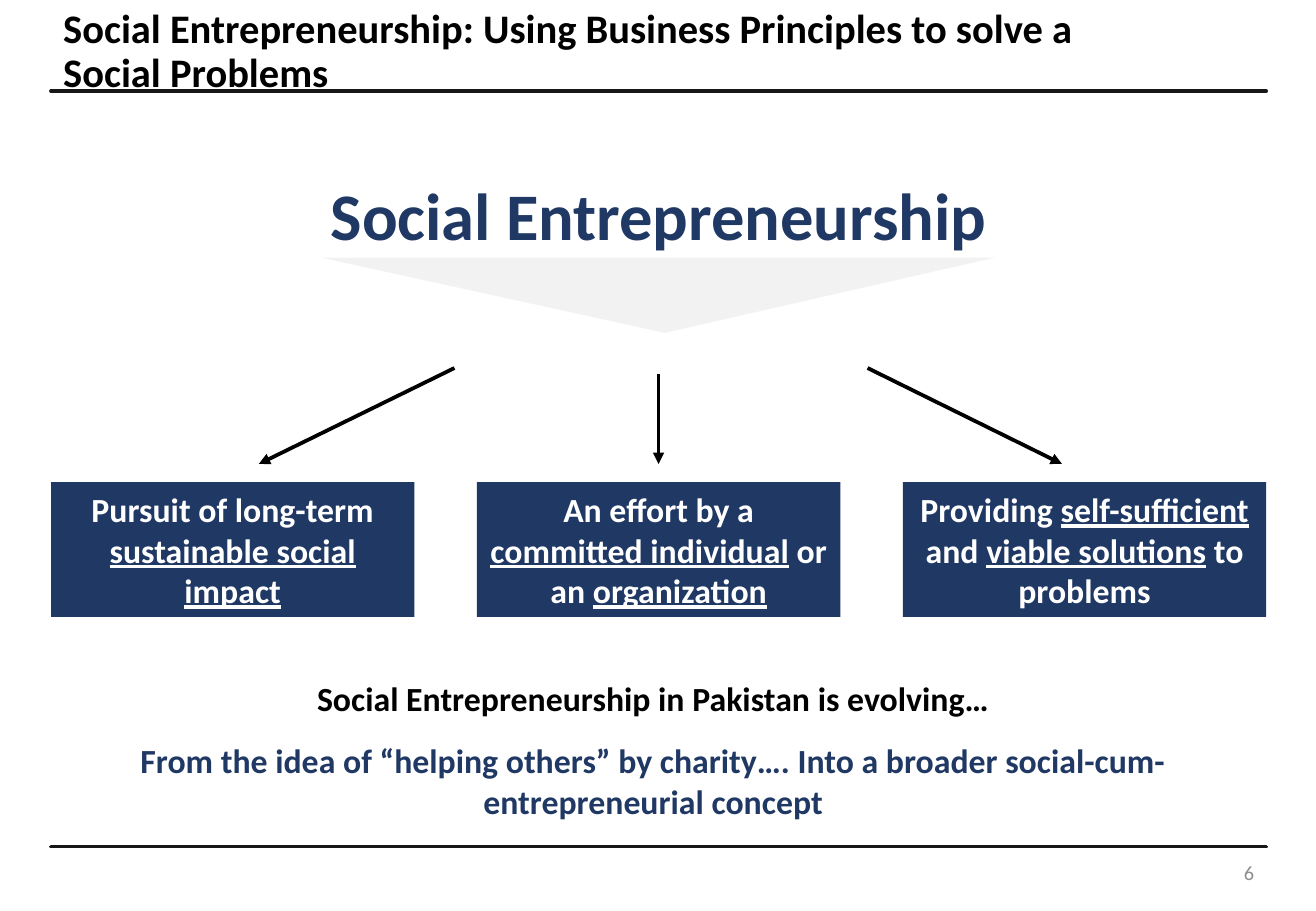
from lxml import etree
from pptx import Presentation
from pptx import util as u
from pptx.dml.color import RGBColor
from pptx.enum import shapes, text
from pptx.oxml.ns import qn

NAVY, BLACK, WHITE = "203864", "000000", "FFFFFF"
RULE, PALE, GREY = "181717", "F2F2F2", "8C8C8C"
LEFT, CENTER, RIGHT = text.PP_ALIGN.LEFT, text.PP_ALIGN.CENTER, text.PP_ALIGN.RIGHT
MIDDLE, TOP = text.MSO_ANCHOR.MIDDLE, text.MSO_ANCHOR.TOP


def color(value):
    return RGBColor.from_string(value)


class SlideBuilder:
    font = "Calibri"
    line_width = 2.25

    def __init__(self, slide):
        self.slide = slide

    def frame(self, shape, anchor, grow=False):
        frame = shape.text_frame
        frame.word_wrap = True
        frame.auto_size = (text.MSO_AUTO_SIZE.SHAPE_TO_FIT_TEXT if grow
                           else text.MSO_AUTO_SIZE.NONE)
        frame.vertical_anchor = anchor
        return frame

    def fill_paragraph(self, paragraph, runs, size, fill, align=CENTER, bold=True):
        """Runs are (wording, underlined) pairs."""
        paragraph.alignment = align
        paragraph.font.name = self.font
        paragraph.font.size = u.Pt(size)
        paragraph.font.bold = bold
        paragraph.font.color.rgb = color(fill)
        for wording, underlined in runs:
            run = paragraph.add_run()
            run.text = wording
            if underlined:
                run.font.underline = True

    def title(self, wording, box, size):
        title = self.slide.shapes.title
        title.left, title.top, title.width, title.height = map(u.Inches, box)
        paragraph = self.frame(title, MIDDLE).paragraphs[0]
        paragraph.line_spacing = 0.9
        self.fill_paragraph(paragraph, [(wording, False)], size, BLACK, LEFT)

    def text_box(self, lines, box, size, anchor=MIDDLE, align=CENTER,
                 bold=True, gap=0, grow=False):
        """Lines are (wording, colour) pairs, one paragraph each."""
        shape = self.slide.shapes.add_textbox(*map(u.Inches, box))
        frame = self.frame(shape, anchor, grow)
        for index, (wording, fill) in enumerate(lines):
            paragraph = frame.add_paragraph() if index else frame.paragraphs[0]
            if index:
                paragraph.space_before = u.Pt(gap)
            self.fill_paragraph(paragraph, [(wording, False)], size, fill, align, bold)

    def shape(self, kind, box, fill):
        shape = self.slide.shapes.add_shape(kind, *map(u.Inches, box))
        shape.shadow.inherit = False
        shape.fill.solid()
        shape.fill.fore_color.rgb = color(fill)
        shape.line.fill.background()
        return shape

    def card(self, runs, box):
        card = self.shape(shapes.MSO_SHAPE.RECTANGLE, box, NAVY)
        frame = self.frame(card, MIDDLE, grow=True)
        self.fill_paragraph(frame.paragraphs[0], runs, 20, WHITE)

    def line(self, start, end, stroke, arrow=False):
        line = self.slide.shapes.add_connector(
            shapes.MSO_CONNECTOR.STRAIGHT, *map(u.Inches, start + end))
        line.line.color.rgb = color(stroke)
        line.line.width = u.Pt(self.line_width)
        properties = line._element.spPr
        outline = properties.find(qn("a:ln"))
        if arrow:
            etree.SubElement(outline, qn("a:tailEnd"), type="triangle")
        else:
            outline.set("cap", "rnd")
        etree.SubElement(properties, qn("a:effectLst"))


def main():
    presentation = Presentation()
    presentation.slide_width = u.Inches(10.83)
    presentation.slide_height = u.Inches(7.5)
    layout = presentation.slide_layouts.get_by_name("Title Only")
    builder = SlideBuilder(presentation.slides.add_slide(layout))

    # Header and footer
    for y in (0.75, 6.97):
        builder.line((0.42, y), (10.42, y), RULE)
    builder.title("Social Entrepreneurship: Using Business Principles to solve a "
                  "Social Problems", (0.42, 0.22, 9.09, 0.42), 24)
    builder.text_box([("6", GREY)], (8.13, 6.98, 2.29, 0.4), 12,
                     align=RIGHT, bold=False)

    # Central concept with the pointer below it
    builder.text_box([("Social Entrepreneurship", NAVY)],
                     (1.56, 1.12, 7.72, 1.28), 39.4)
    pointer = builder.shape(shapes.MSO_SHAPE.ISOSCELES_TRIANGLE,
                            (2.64, 2.12, 5.55, 0.62), PALE)
    pointer.adjustments[0] = 0.49
    pointer.rotation = 180

    # Three defining features
    features = [
        [("Pursuit of long-term ", False), ("sustainable social impact", True)],
        [("An effort by a ", False), ("committed individual", True),
         (" or an ", False), ("organization", True)],
        [("Providing ", False), ("self-sufficient ", True), ("and ", False),
         ("viable solutions", True), (" to problems", False)],
    ]
    card_width = 2.99
    card_step = (10 - card_width) / 2
    for index, runs in enumerate(features):
        builder.card(runs, (0.42 + card_step * index, 3.97, card_width, 1.11))

    # Arrows to the features
    for start, end in [((3.74, 3.03), (2.13, 3.82)),
                       ((5.42, 3.08), (5.42, 3.82)),
                       ((7.14, 3.03), (8.74, 3.82))]:
        builder.line(start, end, BLACK, arrow=True)

    # Closing statement
    builder.text_box(
        [("Social Entrepreneurship in Pakistan is evolving…", BLACK),
         ("From the idea of “helping others” by charity…. Into a broader "
          "social-cum-entrepreneurial concept", NAVY)],
        (0.42, 5.53, 9.91, 1.31), 20, anchor=TOP, gap=13, grow=True)

    presentation.save("out.pptx")


if __name__ == "__main__":
    main()
